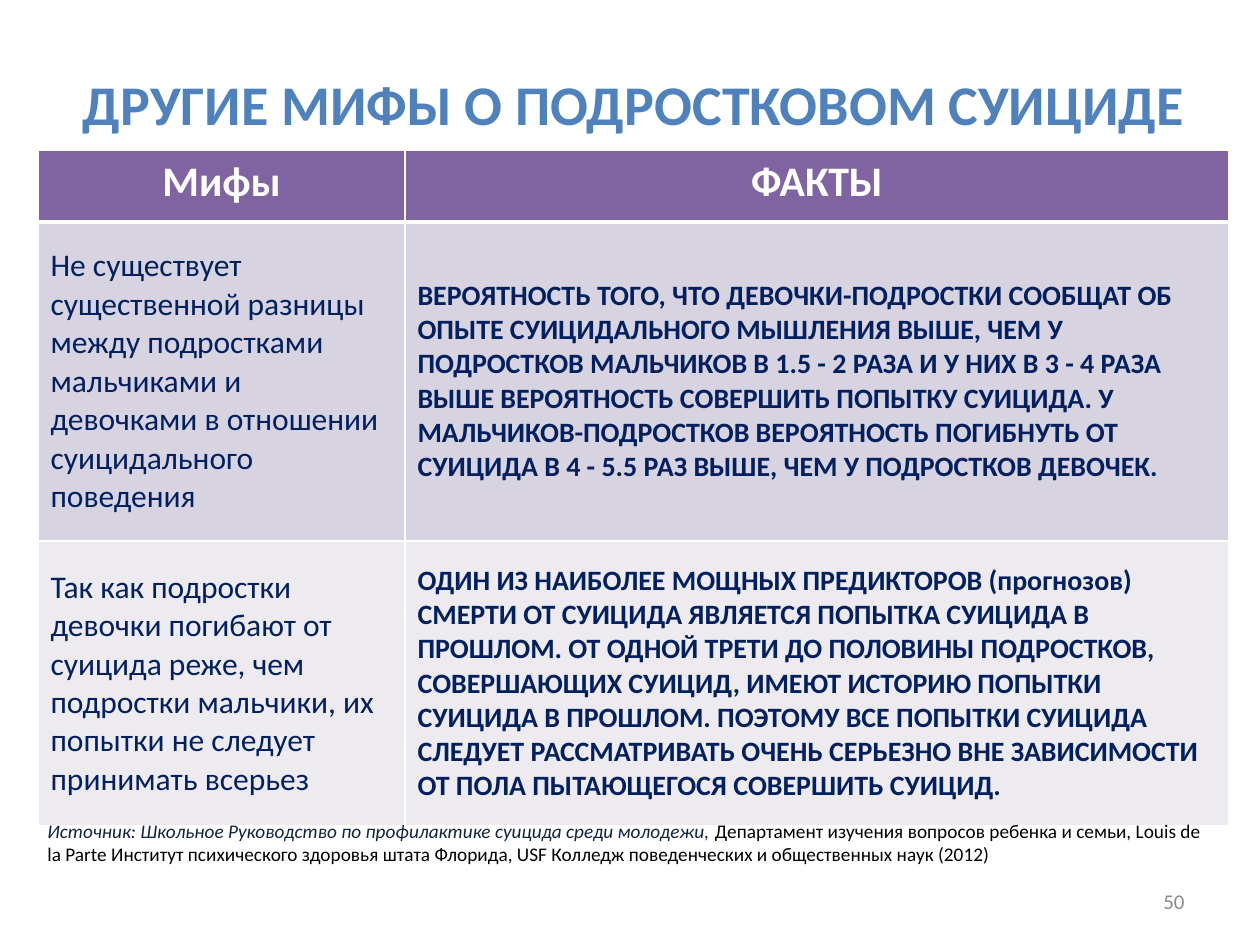
from dataclasses import dataclass
from typing import NamedTuple

from lxml import etree
from pptx import Presentation
from pptx.dml.color import RGBColor
from pptx.enum.text import MSO_ANCHOR, PP_ALIGN
from pptx.oxml.ns import qn
from pptx.util import Emu, Pt

LEFT, CENTER, RIGHT = PP_ALIGN.LEFT, PP_ALIGN.CENTER, PP_ALIGN.RIGHT
TOP, MIDDLE = MSO_ANCHOR.TOP, MSO_ANCHOR.MIDDLE
TITLE_ONLY = 5
PX_PER_INCH = 126


def px(length: int) -> Emu:
    return Emu(round(length * 914400 / PX_PER_INCH))


class Box(NamedTuple):
    left: int
    top: int
    width: int
    height: int


@dataclass(frozen=True)
class Style:
    size: int
    color: str
    bold: bool = False
    italic: bool = False
    align: PP_ALIGN = LEFT
    anchor: MSO_ANCHOR = MIDDLE


@dataclass(frozen=True)
class Theme:
    font: str = "Calibri"
    title: Style = Style(32, "4F81BD", bold=True, align=CENTER)
    header: Style = Style(24, "FFFFFF", bold=True, align=CENTER, anchor=TOP)
    myth: Style = Style(18, "002060")
    fact: Style = Style(16, "002060", bold=True)
    source_name: Style = Style(11, "0F243E", italic=True, anchor=TOP)
    source_rest: Style = Style(11, "000000", anchor=TOP)
    page_number: Style = Style(12, "8C8C8C", align=RIGHT)
    header_fill: str = "8064A2"
    row_fills: tuple[str, ...] = ("D8D3E0", "EDEAF0")
    border: str = "FFFFFF"


class Row(NamedTuple):
    myth: str
    fact: str


class Span(NamedTuple):
    text: str
    style: Style


THEME = Theme()
TITLE = "ДРУГИЕ МИФЫ О ПОДРОСТКОВОМ СУИЦИДЕ"
TITLE_BOX = Box(26, 57, 1216, 93)
TABLE_BOX = Box(38, 150, 1191, 676)
SOURCE_BOX = Box(35, 813, 1191, 59)
PAGE_NUMBER_BOX = Box(903, 876, 294, 50)
COLUMN_WIDTHS = (367, 824)
ROW_HEIGHTS = (72, 319, 285)
ROWS = (
    Row("Мифы", "ФАКТЫ"),
    Row(
        "Не существует существенной разницы между подростками мальчиками и "
        "девочками в отношении суицидального поведения",
        "ВЕРОЯТНОСТЬ ТОГО, ЧТО ДЕВОЧКИ-ПОДРОСТКИ СООБЩАТ ОБ ОПЫТЕ СУИЦИДАЛЬНОГО "
        "МЫШЛЕНИЯ ВЫШЕ, ЧЕМ У ПОДРОСТКОВ МАЛЬЧИКОВ В 1.5 - 2 РАЗА И У НИХ В 3 - 4 "
        "РАЗА ВЫШЕ ВЕРОЯТНОСТЬ СОВЕРШИТЬ ПОПЫТКУ СУИЦИДА. У МАЛЬЧИКОВ-ПОДРОСТКОВ "
        "ВЕРОЯТНОСТЬ ПОГИБНУТЬ ОТ СУИЦИДА В 4 - 5.5 РАЗ ВЫШЕ, ЧЕМ У ПОДРОСТКОВ "
        "ДЕВОЧЕК.",
    ),
    Row(
        "Так как подростки девочки погибают от суицида реже, чем подростки "
        "мальчики, их попытки не следует принимать всерьез",
        "ОДИН ИЗ НАИБОЛЕЕ МОЩНЫХ ПРЕДИКТОРОВ (прогнозов) СМЕРТИ ОТ СУИЦИДА "
        "ЯВЛЯЕТСЯ ПОПЫТКА СУИЦИДА В ПРОШЛОМ. ОТ ОДНОЙ ТРЕТИ ДО ПОЛОВИНЫ "
        "ПОДРОСТКОВ, СОВЕРШАЮЩИХ СУИЦИД, ИМЕЮТ ИСТОРИЮ ПОПЫТКИ СУИЦИДА В ПРОШЛОМ. "
        "ПОЭТОМУ ВСЕ ПОПЫТКИ СУИЦИДА СЛЕДУЕТ РАССМАТРИВАТЬ ОЧЕНЬ СЕРЬЕЗНО ВНЕ "
        "ЗАВИСИМОСТИ ОТ ПОЛА ПЫТАЮЩЕГОСЯ СОВЕРШИТЬ СУИЦИД.",
    ),
)
SOURCE = (
    Span("Источник: Школьное Руководство по профилактике суицида среди молодежи, ",
         THEME.source_name),
    Span("Департамент изучения вопросов ребенка и семьи, Louis de la Parte Институт "
         "психического здоровья штата Флорида, USF Колледж поведенческих и "
         "общественных наук (2012)", THEME.source_rest),
)


def write_spans(text_frame, *spans: Span) -> None:
    paragraph = text_frame.paragraphs[0]
    paragraph.alignment = spans[0].style.align
    for text, style in spans:
        run = paragraph.add_run()
        run.text = text
        formats = {"name": THEME.font, "size": Pt(style.size),
                   "bold": style.bold, "italic": style.italic}
        for name, value in formats.items():
            setattr(run.font, name, value)
        run.font.color.rgb = RGBColor.from_string(style.color)


def add_text(slide, box: Box, *spans: Span) -> None:
    text_frame = slide.shapes.add_textbox(*map(px, box)).text_frame
    text_frame.word_wrap = True
    text_frame.vertical_anchor = spans[0].style.anchor
    write_spans(text_frame, *spans)


def place_title(slide) -> None:
    title = slide.shapes.title
    for name, value in TITLE_BOX._asdict().items():
        setattr(title, name, px(value))
    title.text_frame.vertical_anchor = THEME.title.anchor
    write_spans(title.text_frame, Span(TITLE, THEME.title))


def set_borders(cell, widths: dict[str, int]) -> None:
    """Add cell lines ahead of the fill, as the schema orders them."""
    properties = cell._tc.get_or_add_tcPr()
    for index, (side, width) in enumerate(widths.items()):
        line = etree.Element(qn(f"a:ln{side}"), w=str(Pt(width)))
        fill = etree.SubElement(line, qn("a:solidFill"))
        etree.SubElement(fill, qn("a:srgbClr"), val=THEME.border)
        properties.insert(index, line)


def fill_cell(cell, span: Span, fill: str, borders: dict[str, int]) -> None:
    cell.fill.solid()
    cell.fill.fore_color.rgb = RGBColor.from_string(fill)
    cell.vertical_anchor = span.style.anchor
    write_spans(cell.text_frame, span)
    set_borders(cell, borders)


def add_myth_table(slide) -> None:
    table = slide.shapes.add_table(
        len(ROWS), len(COLUMN_WIDTHS), *map(px, TABLE_BOX)).table
    table.horz_banding = False
    for column, width in zip(table.columns, COLUMN_WIDTHS):
        column.width = px(width)
    for row, height in zip(table.rows, ROW_HEIGHTS):
        row.height = px(height)

    fills = (THEME.header_fill, *THEME.row_fills)
    for row_index, (row, fill) in enumerate(zip(ROWS, fills)):
        is_header = row_index == 0
        styles = (THEME.header,) * 2 if is_header else (THEME.myth, THEME.fact)
        borders = {"L": 1, "R": 1, "T": 3 if row_index == 1 else 1,
                   "B": 3 if is_header else 1}
        for column_index, (text, style) in enumerate(zip(row, styles)):
            fill_cell(table.cell(row_index, column_index), Span(text, style),
                      fill, borders)


def main() -> None:
    presentation = Presentation()
    presentation.slide_width = px(1260)
    presentation.slide_height = px(945)
    slide = presentation.slides.add_slide(presentation.slide_layouts[TITLE_ONLY])
    place_title(slide)
    add_text(slide, PAGE_NUMBER_BOX, Span("50", THEME.page_number))
    add_myth_table(slide)
    add_text(slide, SOURCE_BOX, *SOURCE)
    presentation.save("out.pptx")


if __name__ == "__main__":
    main()
